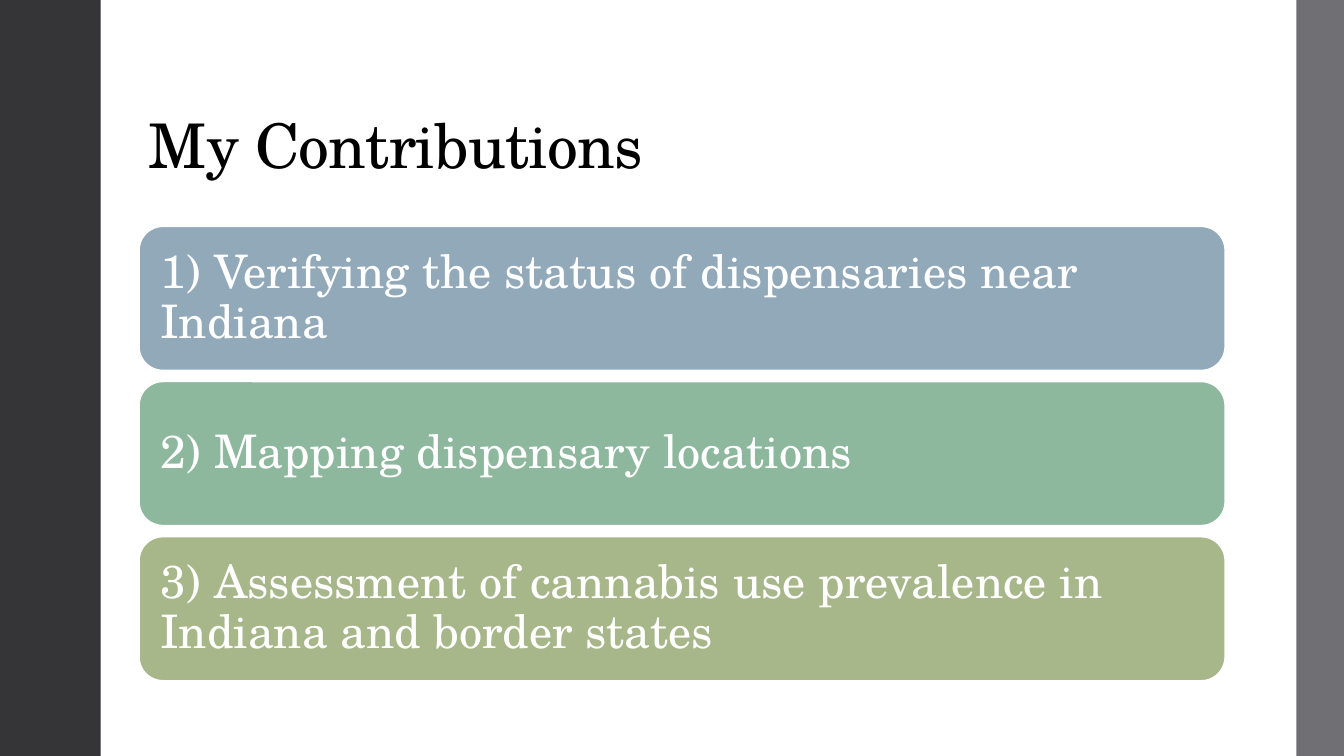
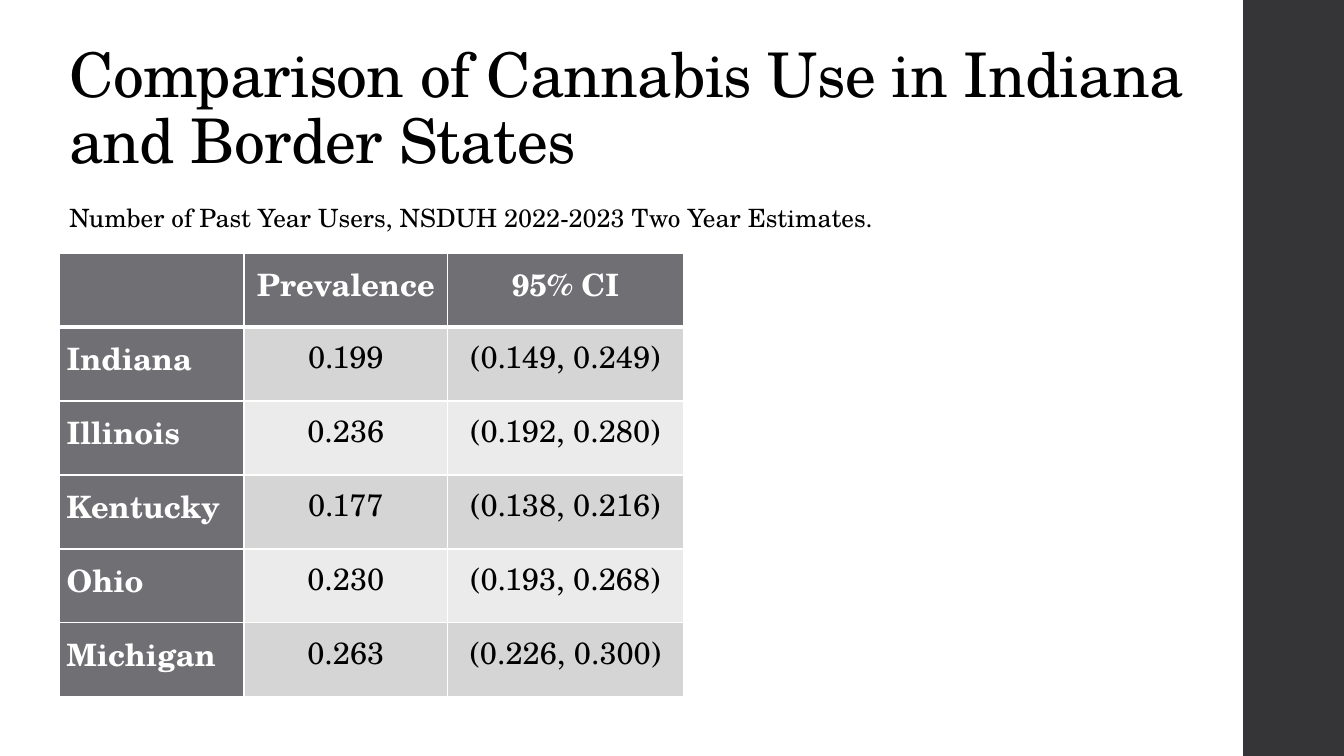
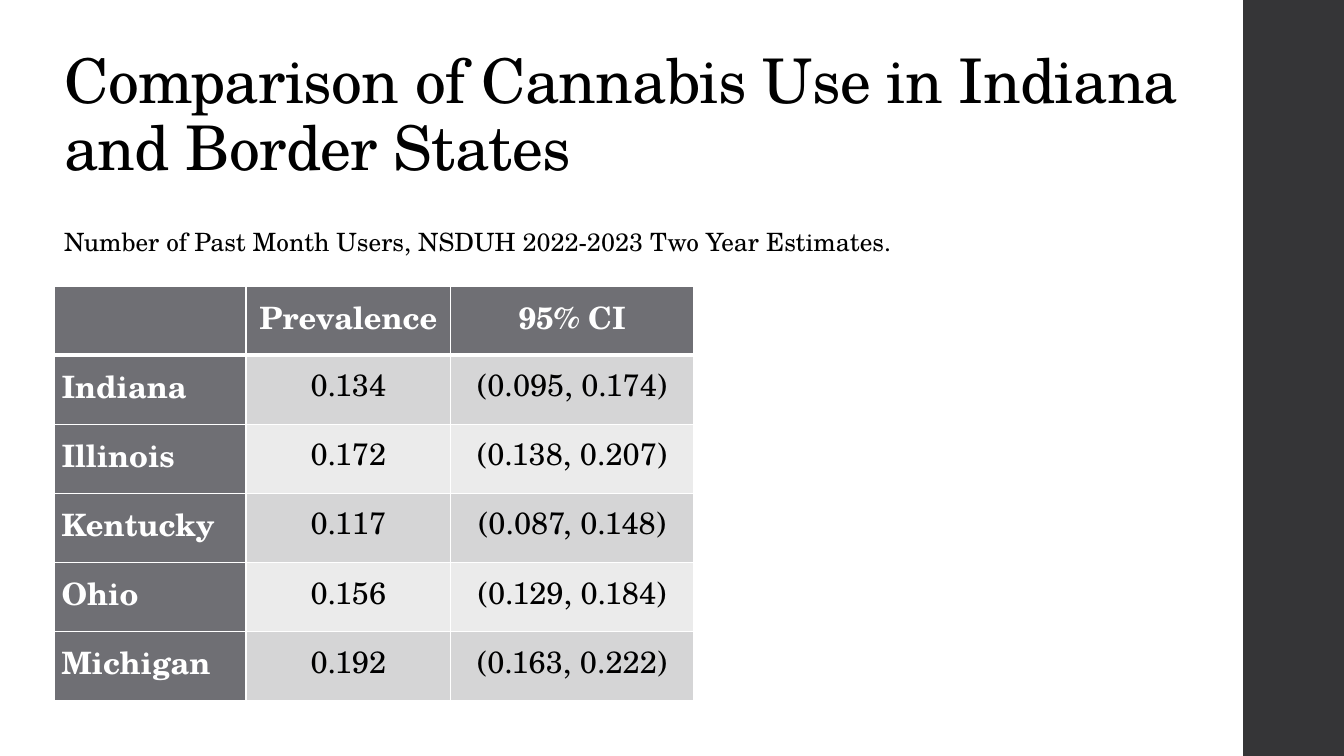
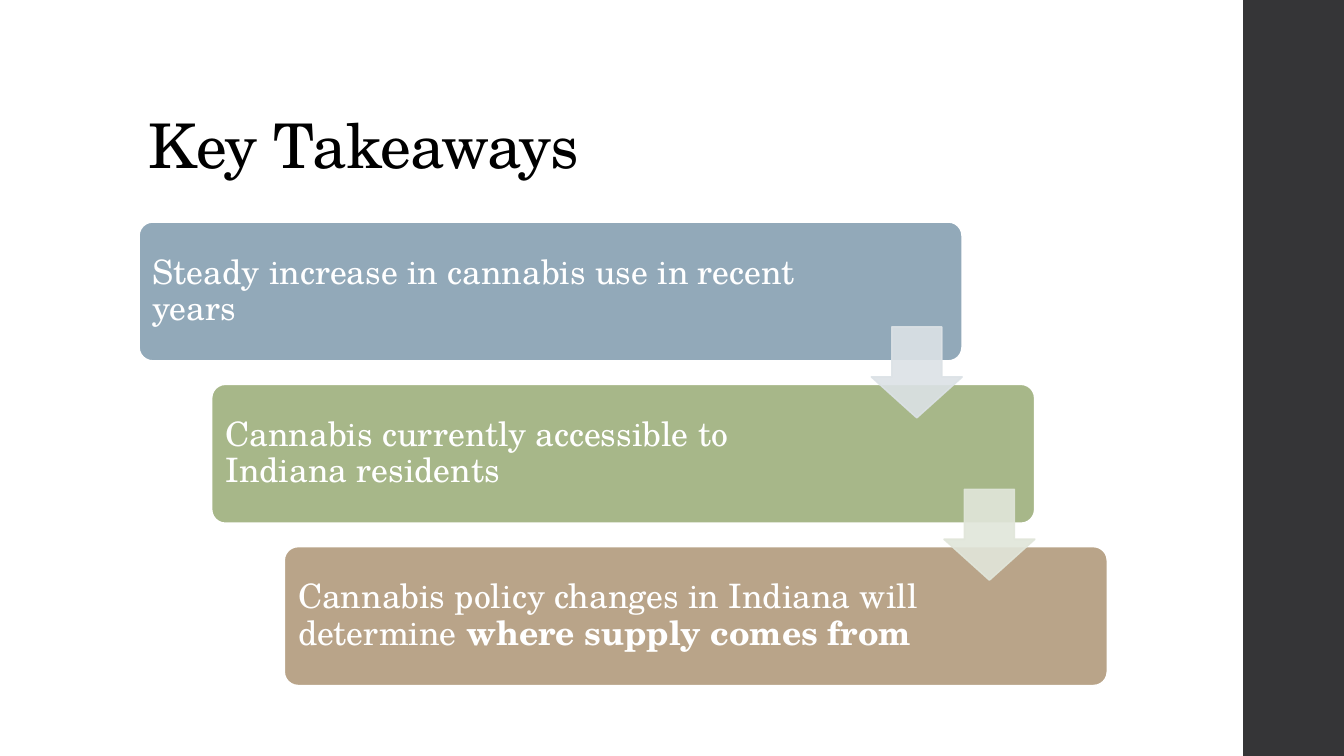
from lxml.etree import SubElement
from pptx import Presentation
from pptx.dml.color import RGBColor
from pptx.enum.shapes import MSO_SHAPE as Shape
from pptx.enum.text import MSO_ANCHOR as Anchor, PP_ALIGN as Align
from pptx.oxml.ns import qn
from pptx.util import Cm, Pt

FONT = "TeX Gyre Schola"
BLACK = RGBColor(0x00, 0x00, 0x00)
WHITE = RGBColor(0xFF, 0xFF, 0xFF)
DARK = RGBColor(0x35, 0x35, 0x37)
GREY = RGBColor(0x6F, 0x6F, 0x74)
STRIPES = (RGBColor(0xD5, 0xD5, 0xD6), RGBColor(0xEB, 0xEB, 0xEB))
BLUE = RGBColor(0x92, 0xA9, 0xB9)
GREEN = RGBColor(0x8E, 0xB8, 0x9E)
OLIVE = RGBColor(0xA7, 0xB7, 0x89)
TAN = RGBColor(0xB9, 0xA4, 0x89)
PALE_BLUE = RGBColor(0xDC, 0xE2, 0xE6)
PALE_OLIVE = RGBColor(0xE1, 0xE6, 0xDA)

SLIDE_W, SLIDE_H = 33.87, 19.05
BAND_W = 2.54
EDGE_W = 1.2
COMPARISON = "Comparison of Cannabis Use in Indiana and Border States"


def write(frame, text, bold_tail="", size=18, color=BLACK, bold=False,
          align=Align.LEFT, spacing=1.0, after=0, tracking=0):
    paragraph = frame.paragraphs[0]
    paragraph.alignment = align
    paragraph.line_spacing = spacing
    paragraph.space_after = Pt(after)
    for words, heavy in ((text, bold), (bold_tail, True)):
        if words:
            run = paragraph.add_run()
            run.text = words
            run.font.name = FONT
            run.font.size = Pt(size)
            run.font.bold = heavy
            run.font.color.rgb = color
            if tracking:
                run.font._element.set("spc", str(round(tracking * 100)))


def add_text(slide, box, text, anchor=Anchor.TOP, **style):
    frame = slide.shapes.add_textbox(*map(Cm, box)).text_frame
    frame.word_wrap = True
    frame.vertical_anchor = anchor
    write(frame, text, **style)


def add_shape(slide, kind, box, fill, line=None, line_width=1.35, adjust=()):
    shape = slide.shapes.add_shape(kind, *map(Cm, box))
    shape.shadow.inherit = False
    shape.fill.solid()
    shape.fill.fore_color.rgb = fill
    if line is None:
        shape.line.fill.background()
    else:
        shape.line.color.rgb = line
        shape.line.width = Pt(line_width)
    for index, value in enumerate(adjust):
        shape.adjustments[index] = value
    return shape


def add_card(slide, box, fill, text, size, inset, right_inset=None,
             adjust=(), bold_tail=""):
    card = add_shape(slide, Shape.ROUNDED_RECTANGLE, box, fill, WHITE, adjust=adjust)
    frame = card.text_frame
    frame.word_wrap = True
    frame.vertical_anchor = Anchor.MIDDLE
    frame.margin_left = frame.margin_top = frame.margin_bottom = Cm(inset)
    frame.margin_right = Cm(right_inset or inset)
    write(frame, text, bold_tail, size=size, color=WHITE, spacing=0.9)


def add_arrow(slide, box, color):
    arrow = add_shape(slide, Shape.DOWN_ARROW, box, color, color, 1.1, (0.55, 0.45))
    for tint in arrow._element.spPr.iter(qn("a:srgbClr")):
        SubElement(tint, qn("a:alpha"), val="90000")


def add_borders(cell, **widths):
    properties = cell._tc.get_or_add_tcPr()
    for side in "LRTB":
        width = Pt(widths.get(side, 1))
        border = SubElement(properties, qn(f"a:ln{side}"), w=str(width))
        fill = SubElement(border, qn("a:solidFill"))
        SubElement(fill, qn("a:srgbClr"), val=str(WHITE))


def start_slide(deck, title, title_box, bands=((SLIDE_W - BAND_W, BAND_W, DARK),)):
    slide = deck.slides.add_slide(deck.slide_layouts[6])
    for left, width, color in bands:
        add_shape(slide, Shape.RECTANGLE, (left, 0, width, SLIDE_H), color)
    add_text(slide, title_box, title, Anchor.BOTTOM,
             size=44, spacing=0.9, tracking=-0.5)
    return slide


def add_card_stack(slide, box, cards, gap):
    left, top, width, height = box
    card_h = (height - gap * (len(cards) - 1)) / len(cards)
    for index, (text, fill) in enumerate(cards):
        place = (left, top + index * (card_h + gap), width, card_h)
        add_card(slide, place, fill, text, 33, 0.36)


def add_staircase(slide, box, steps, arrow_colors):
    left, top, width, height = box
    step_w, step_h, arrow = 20.75, 3.51, 2.29
    last = len(steps) - 1
    shift_x, shift_y = (width - step_w) / last, (height - step_h) / last
    corners = [(left + i * shift_x, top + i * shift_y) for i in range(len(steps))]
    for (x, y), (text, bold_tail, fill, right_inset) in zip(corners, steps):
        add_card(slide, (x, y, step_w, step_h), fill, text, 24, 0.25,
                 right_inset, (0.1,), bold_tail)
    for (x, y), color in zip(corners, arrow_colors):
        add_arrow(slide, (x + step_w - arrow, y + 2.65, arrow, arrow), color)


def add_prevalence_table(slide, box, column_widths, states):
    rows = [("", "Prevalence", "95% CI"), *states]
    table = slide.shapes.add_table(len(rows), 3, *map(Cm, box)).table
    for column, width in zip(table.columns, column_widths):
        column.width = Cm(width)
    for r, values in enumerate(rows):
        table.rows[r].height = Cm(box[3] / len(rows))
        for c, value in enumerate(values):
            cell = table.cell(r, c)
            heading = r == 0 or c == 0
            add_borders(cell, T=3 if r == 1 else 1, B=3 if r == 0 else 1)
            cell.fill.solid()
            cell.fill.fore_color.rgb = GREY if heading else STRIPES[(r - 1) % 2]
            cell.margin_left = cell.margin_right = Cm(0.18)
            cell.margin_top = cell.margin_bottom = 0
            write(cell.text_frame, value, size=22, bold=heading,
                  color=WHITE if heading else BLACK,
                  align=Align.LEFT if c == 0 else Align.CENTER,
                  spacing=1.15, after=8)


def contributions_slide(deck):
    bands = ((0, BAND_W, DARK), (SLIDE_W - EDGE_W, EDGE_W, GREY))
    slide = start_slide(deck, "My Contributions", (3.5, 1.02, 27.38, 3.68), bands)
    add_card_stack(slide, (3.5, 5.7, 27.38, 11.46), (
        ("1) Verifying the status of dispensaries near Indiana", BLUE),
        ("2) Mapping dispensary locations", GREEN),
        ("3) Assessment of cannabis use prevalence in Indiana and border states", OLIVE),
    ), gap=0.27)


def comparison_slide(deck, title_box, caption, caption_top, table_box,
                     column_widths, states):
    slide = start_slide(deck, COMPARISON, title_box)
    left = title_box[0]
    add_prevalence_table(slide, table_box, column_widths, states)
    add_text(slide, (left, caption_top, 28.27, 1.02), caption)


def takeaways_slide(deck):
    slide = start_slide(deck, "Key Takeaways", (3.5, 1.02, 26.92, 3.68))
    add_staircase(slide, (3.5, 5.59, 24.41, 11.69), (
        ("Steady increase in cannabis use in recent years", "", BLUE, 3.83),
        ("Cannabis currently accessible to Indiana residents", "", OLIVE, 4.37),
        ("Cannabis policy changes in Indiana will determine ",
         "where supply comes from", TAN, 4.37),
    ), (PALE_BLUE, PALE_OLIVE))


def main():
    deck = Presentation()
    deck.slide_width, deck.slide_height = Cm(SLIDE_W), Cm(SLIDE_H)
    contributions_slide(deck)
    comparison_slide(
        deck, (1.5, 0.91, 29.08, 3.68),
        "Number of Past Year Users, NSDUH 2022-2023 Two Year Estimates.", 4.98,
        (1.5, 6.38, 15.72, 11.18), (4.65, 5.13, 5.94), (
            ("Indiana", "0.199", "(0.149, 0.249)"),
            ("Illinois", "0.236", "(0.192, 0.280)"),
            ("Kentucky", "0.177", "(0.138, 0.216)"),
            ("Ohio", "0.230", "(0.193, 0.268)"),
            ("Michigan", "0.263", "(0.226, 0.300)"),
        ))
    comparison_slide(
        deck, (1.37, 1.07, 30.58, 3.68),
        "Number of Past Month Users, NSDUH 2022-2023 Two Year Estimates.", 5.59,
        (1.37, 7.21, 16.11, 10.44), (4.83, 5.16, 6.12), (
            ("Indiana", "0.134", "(0.095, 0.174)"),
            ("Illinois", "0.172", "(0.138, 0.207)"),
            ("Kentucky", "0.117", "(0.087, 0.148)"),
            ("Ohio", "0.156", "(0.129, 0.184)"),
            ("Michigan", "0.192", "(0.163, 0.222)"),
        ))
    takeaways_slide(deck)
    deck.save("out.pptx")


if __name__ == "__main__":
    main()
